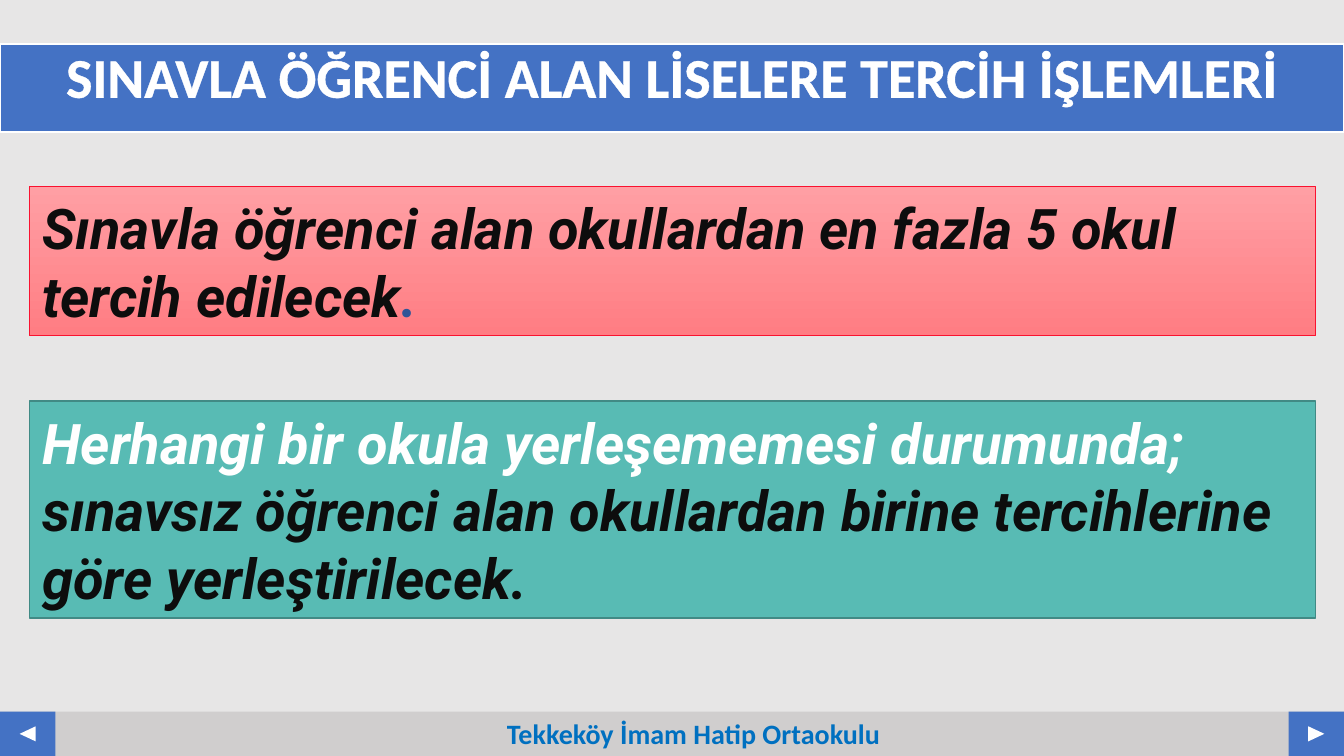
import pptx
import pptx.util
import pptx.dml.color
import pptx.enum.shapes
import pptx.enum.text
import lxml.etree

Inches = pptx.util.Inches
Pt = pptx.util.Pt
RGBColor = pptx.dml.color.RGBColor
Shape = pptx.enum.shapes.MSO_SHAPE
Anchor = pptx.enum.text.MSO_ANCHOR
Align = pptx.enum.text.PP_ALIGN

BACKGROUND = RGBColor(0xE7, 0xE6, 0xE6)
BLUE = RGBColor(0x44, 0x72, 0xC4)
GREY = RGBColor(0xD0, 0xCE, 0xCE)
WHITE = RGBColor(0xFF, 0xFF, 0xFF)
INK = RGBColor(0x0D, 0x0D, 0x0D)
NAVY = RGBColor(0x2F, 0x55, 0x97)
PINK_LIGHT = RGBColor(0xFF, 0x9F, 0xA4)
PINK_DARK = RGBColor(0xFF, 0x7D, 0x83)
RED = RGBColor(0xFA, 0x12, 0x30)
TEAL = RGBColor(0x58, 0xBB, 0xB4)
TEAL_DARK = RGBColor(0x41, 0x8A, 0x85)
SCHOOL_BLUE = RGBColor(0x00, 0x70, 0xC0)

SLIDE_WIDTH = 13.33
FOOTER_TOP = 7.06
FOOTER_HEIGHT = 0.44
BUTTON_WIDTH = 0.55
ARROW_WIDTH = 0.15


def paint(shape, colors):
    if len(colors) == 1:
        shape.fill.solid()
        shape.fill.fore_color.rgb = colors[0]
        return
    shape.fill.gradient()
    shape.fill.gradient_angle = 270
    for stop, color in zip(shape.fill.gradient_stops, colors):
        stop.color.rgb = color


def outline(shape, color, width):
    shape.line.color.rgb = color
    shape.line.width = Pt(width)


def style_run(run, font_name, size, color, italic=False):
    run.font.name = font_name
    run.font.size = Pt(size)
    run.font.bold = True
    run.font.italic = italic
    run.font.color.rgb = color


def add_block(slide, kind, left, top, width, height, *colors):
    block = slide.shapes.add_shape(
        kind, Inches(left), Inches(top), Inches(width), Inches(height))
    block.shadow.inherit = False
    paint(block, colors)
    block.line.fill.background()
    return block


def outline_letters(run, color, width):
    props = run.font._element
    namespace = props.nsmap["a"]
    line = lxml.etree.Element(f"{{{namespace}}}ln", w=str(Pt(width)))
    fill = lxml.etree.SubElement(line, f"{{{namespace}}}solidFill")
    lxml.etree.SubElement(fill, f"{{{namespace}}}srgbClr", val=str(color))
    props.insert(0, line)


def set_title(slide, text):
    title = slide.shapes.title
    title.left, title.top = Inches(0), Inches(0.44)
    title.width, title.height = Inches(SLIDE_WIDTH), Inches(0.87)
    paint(title, [BLUE])
    outline(title, WHITE, 1.5)
    frame = title.text_frame
    frame.text = text
    frame.word_wrap = True
    frame.auto_size = pptx.enum.text.MSO_AUTO_SIZE.NONE
    frame.vertical_anchor = Anchor.TOP
    heading = frame.paragraphs[0]
    heading.alignment = Align.CENTER
    heading.line_spacing = 0.9
    heading.space_before = Pt(0)
    style_run(heading.runs[0], "Calibri", 40, WHITE)
    outline_letters(heading.runs[0], WHITE, 1.45)


def add_rule_box(slide, top, height, colors, border, border_width, parts):
    box = add_block(slide, Shape.RECTANGLE, 0.29, top, 12.76, height, *colors)
    outline(box, border, border_width)
    frame = box.text_frame
    frame.word_wrap = True
    frame.vertical_anchor = Anchor.MIDDLE
    frame.margin_left = frame.margin_right = Inches(0.13)
    frame.margin_top = frame.margin_bottom = Inches(0.07)
    rule = frame.paragraphs[0]
    rule.alignment = Align.LEFT
    for text, color in parts:
        run = rule.add_run()
        run.text = text
        style_run(run, "Roboto", 40, color, italic=True)


def add_footer(slide, school):
    add_block(slide, Shape.RECTANGLE, 0, FOOTER_TOP,
              SLIDE_WIDTH, FOOTER_HEIGHT, GREY)
    for left, rotation in ((0, 270), (SLIDE_WIDTH - BUTTON_WIDTH, 90)):
        add_block(slide, Shape.RECTANGLE, left, FOOTER_TOP,
                  BUTTON_WIDTH, FOOTER_HEIGHT, BLUE)
        arrow = add_block(slide, Shape.ISOSCELES_TRIANGLE,
                          left + (BUTTON_WIDTH - ARROW_WIDTH) / 2, 7.2,
                          ARROW_WIDTH, 0.16, WHITE)
        arrow.rotation = rotation
    label = slide.shapes.add_textbox(
        Inches(4.93), Inches(FOOTER_TOP), Inches(4.02), Inches(FOOTER_HEIGHT))
    label.text_frame.word_wrap = True
    label.text_frame.text = school
    style_run(label.text_frame.paragraphs[0].runs[0],
              "Calibri", 20, SCHOOL_BLUE)


def main():
    deck = pptx.Presentation()
    deck.slide_width = Inches(SLIDE_WIDTH)
    deck.slide_height = Inches(7.5)
    slide = deck.slides.add_slide(deck.slide_layouts[5])
    slide.background.fill.solid()
    slide.background.fill.fore_color.rgb = BACKGROUND

    set_title(slide, "SINAVLA ÖĞRENCİ ALAN LİSELERE TERCİH İŞLEMLERİ")
    add_rule_box(slide, 1.85, 1.48, [PINK_LIGHT, PINK_DARK], RED, 0.5, [
        ("Sınavla öğrenci alan okullardan en fazla 5 okul tercih edilecek", INK),
        (".", NAVY),
    ])
    add_rule_box(slide, 3.98, 2.15, [TEAL], TEAL_DARK, 1, [
        ("Herhangi bir okula yerleşememesi durumunda; ", WHITE),
        ("sınavsız öğrenci alan okullardan birine tercihlerine göre "
         "yerleştirilecek.", INK),
    ])
    add_footer(slide, "Tekkeköy İmam Hatip Ortaokulu")
    deck.save("out.pptx")


if __name__ == "__main__":
    main()
